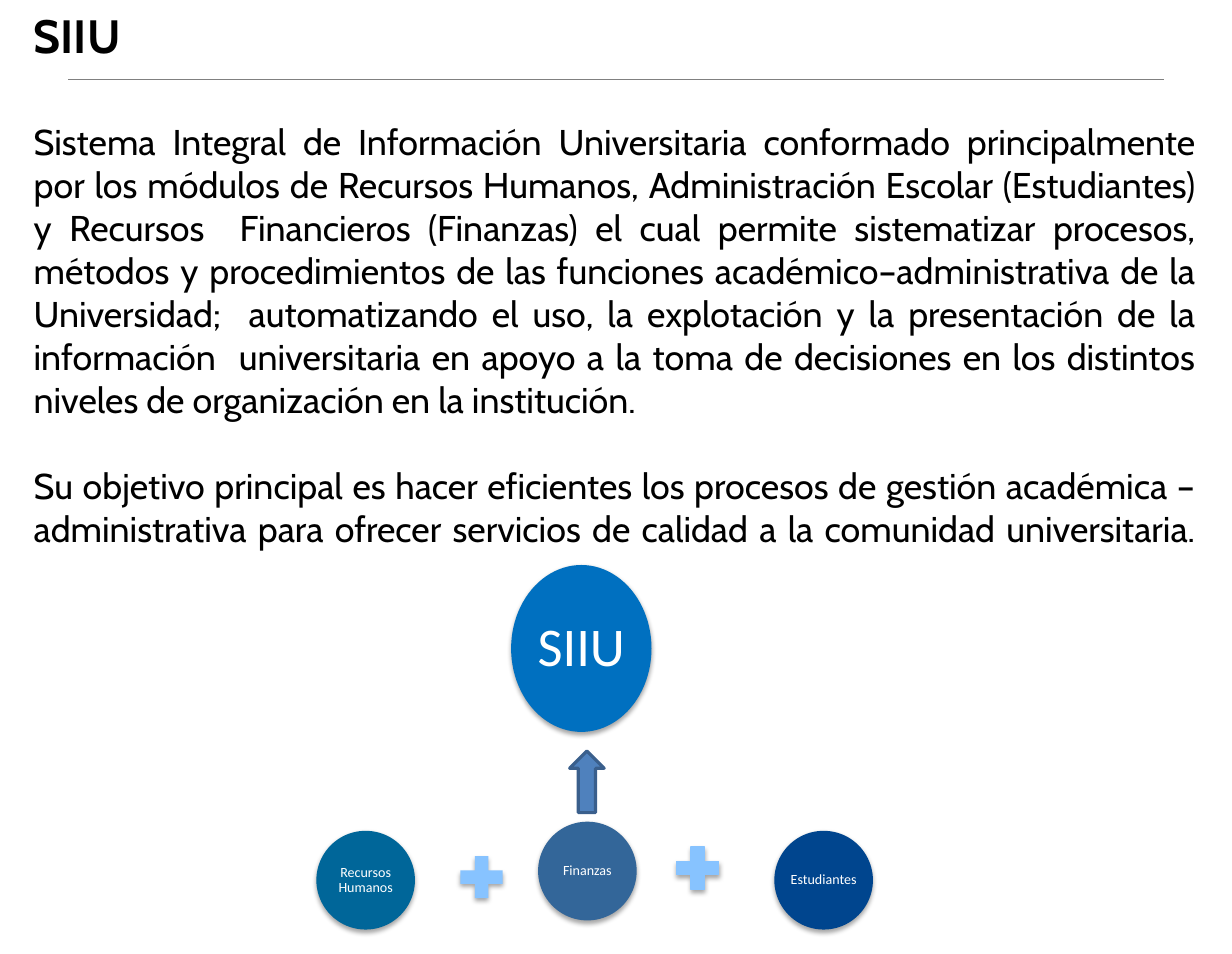
from dataclasses import dataclass

from lxml import etree
from pptx import Presentation
from pptx import util as u
from pptx.dml.color import RGBColor
from pptx.enum import shapes, text
from pptx.oxml import ns

KIND = shapes.MSO_SHAPE
ALIGN = text.PP_ALIGN
WIDE, HIGH = 10.99, 8.51


@dataclass(frozen=True)
class Theme:
    head: str = "Cabin"
    label: str = "Calibri"
    ink: str = "000000"
    white: str = "FFFFFF"
    rule: str = "808080"
    hub: str = "0070C0"
    staff: str = "006699"
    money: str = "336699"
    pupil: str = "00458E"
    plus: str = "87C3FF"
    arrow: str = "4F81BD"
    edge: str = "3A5F8C"
    title: int = 30
    body: int = 23
    big: int = 35
    small: int = 9


T = Theme()

ABOUT = (
    "Sistema Integral de Información Universitaria conformado principalmente por los módulos de "
    "Recursos Humanos, Administración Escolar (Estudiantes) y Recursos  Financieros (Finanzas) el "
    "cual permite sistematizar procesos, métodos y procedimientos de las funciones "
    "académico–administrativa de la Universidad;  automatizando el uso, la explotación y la "
    "presentación de la información  universitaria en apoyo a la toma de decisiones en los "
    "distintos niveles de organización en la institución."
)
GOAL = (
    "Su objetivo principal es hacer eficientes los procesos de gestión académica – administrativa "
    "para ofrecer servicios de calidad a la comunidad universitaria."
)


def rgb(tone):
    return RGBColor.from_string(tone)


def node(root, tag, **attrs):
    return etree.SubElement(root, ns.qn(tag), attrs)


def place(item, box):
    item.left, item.top, item.width, item.height = map(u.Inches, box)


def write(para, words, *, size, font=T.head, tone=T.ink, bold=False,
          align=ALIGN.LEFT, lead=1.0, before=0):
    para.alignment = align
    para.line_spacing = lead
    para.space_before = u.Pt(before)
    run = para.add_run()
    run.text = words
    run.font.name = font
    run.font.size = u.Pt(size)
    run.font.bold = bold
    run.font.color.rgb = rgb(tone)


def shade(item):
    glow = node(item.element.spPr.find(ns.qn("a:effectLst")), "a:outerShdw",
                blurRad="39400", dist="22900", dir="5400000", rotWithShape="0")
    node(node(glow, "a:srgbClr", val=T.ink), "a:alpha", val="35000")


def shape(slide, kind, box, fill, edge=None, weight=0.75, soft=True):
    left, top, width, height = map(u.Inches, box)
    item = slide.shapes.add_shape(kind, left, top, width, height)
    item.shadow.inherit = False
    item.fill.solid()
    item.fill.fore_color.rgb = rgb(fill)
    if edge:
        item.line.color.rgb = rgb(edge)
        item.line.width = u.Pt(weight)
    else:
        item.line.fill.background()
    if soft:
        shade(item)
    return item


def disc(slide, box, words, fill, size, inset):
    frame = shape(slide, KIND.OVAL, box, fill).text_frame
    frame.word_wrap = True
    frame.vertical_anchor = text.MSO_ANCHOR.MIDDLE
    frame.margin_left = frame.margin_right = u.Inches(inset)
    frame.margin_top = frame.margin_bottom = u.Inches(inset)
    write(frame.paragraphs[0], words, size=size, font=T.label, tone=T.white,
          align=ALIGN.CENTER, lead=0.9)


def header(slide, box):
    title = slide.shapes.title
    place(title, box)
    frame = title.text_frame
    frame.auto_size = text.MSO_AUTO_SIZE.NONE
    frame.vertical_anchor = text.MSO_ANCHOR.MIDDLE
    write(frame.paragraphs[0], "SIIU", size=T.title, bold=True)
    left, right, y = map(u.Inches, (0.61, WIDE - 0.61, box[1] + box[3] + 0.16))
    rule = slide.shapes.add_connector(shapes.MSO_CONNECTOR.STRAIGHT, left, y, right, y)
    rule.line.color.rgb = rgb(T.rule)
    rule.line.width = u.Pt(0.75)
    node(rule.element.spPr, "a:effectLst")


def prose(slide, box):
    body = slide.placeholders[1]
    place(body, box)
    frame = body.text_frame
    frame.auto_size = text.MSO_AUTO_SIZE.NONE
    frame.vertical_anchor = text.MSO_ANCHOR.TOP
    for para, words, before in ((frame.paragraphs[0], ABOUT, 0),
                                (frame.add_paragraph(), GOAL, 28)):
        props = para._p.get_or_add_pPr()
        props.set("marL", "0")
        props.set("indent", "0")
        node(props, "a:buNone")
        write(para, words, size=T.body, align=ALIGN.JUSTIFY, before=before)
    para.add_line_break()


def diagram(slide, box):
    left, top, width, height = box
    col, row = width / 100, height / 100

    def cell(x, y, wide, high):
        return (left + (x - wide / 2) * col, top + (y - high / 2) * row,
                wide * col, high * row)

    for words, x, y, fill in (("Recursos Humanos", 8.9, 86.5, T.staff),
                              ("Finanzas", 48.7, 84, T.money),
                              ("Estudiantes", 91.1, 86.5, T.pupil)):
        disc(slide, cell(x, y, 17.7, 27.1), words, fill, T.small, 0.01)
    for x, y, edge in ((29.7, 85.7, None), (68.5, 83.2, T.plus)):
        shape(slide, KIND.MATH_PLUS, cell(x, y, 10.3, 15.7), T.plus, edge)
    disc(slide, cell(47.6, 22.9, 25.2, 45.8), "SIIU", T.hub, T.big, 0.05)
    shape(slide, KIND.UP_ARROW, cell(48.6, 59.5, 6.2, 16.9), T.arrow, T.edge, 2, soft=False)


def main():
    deck = Presentation()
    deck.slide_width, deck.slide_height = u.Inches(WIDE), u.Inches(HIGH)
    slide = deck.slides.add_slide(deck.slide_layouts[1])
    header(slide, (0.2, 0.08, 8.05, 0.47))
    prose(slide, (0.2, 1.02, 10.58, 5.13))
    diagram(slide, (2.82, 5.04, 4.97, 3.25))
    deck.save("out.pptx")


if __name__ == "__main__":
    main()
